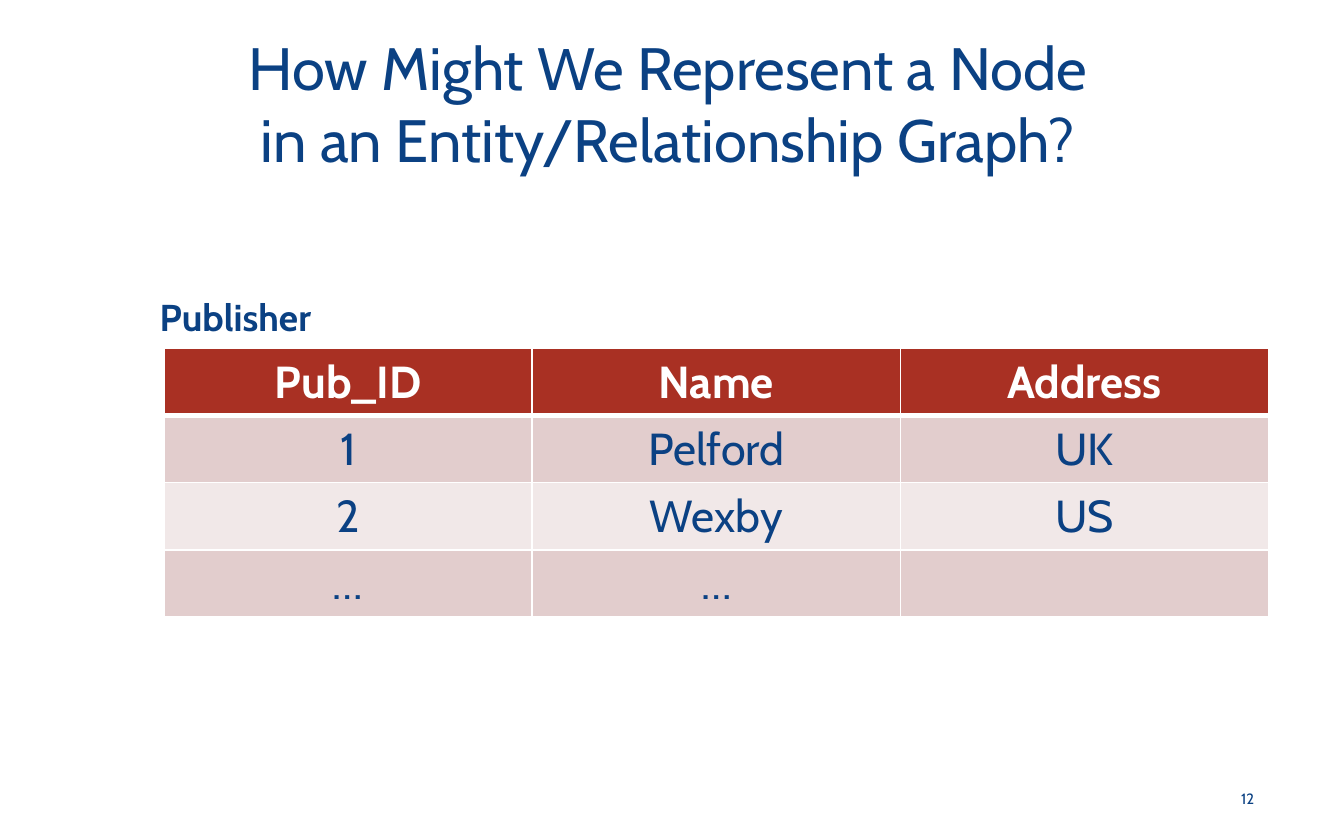
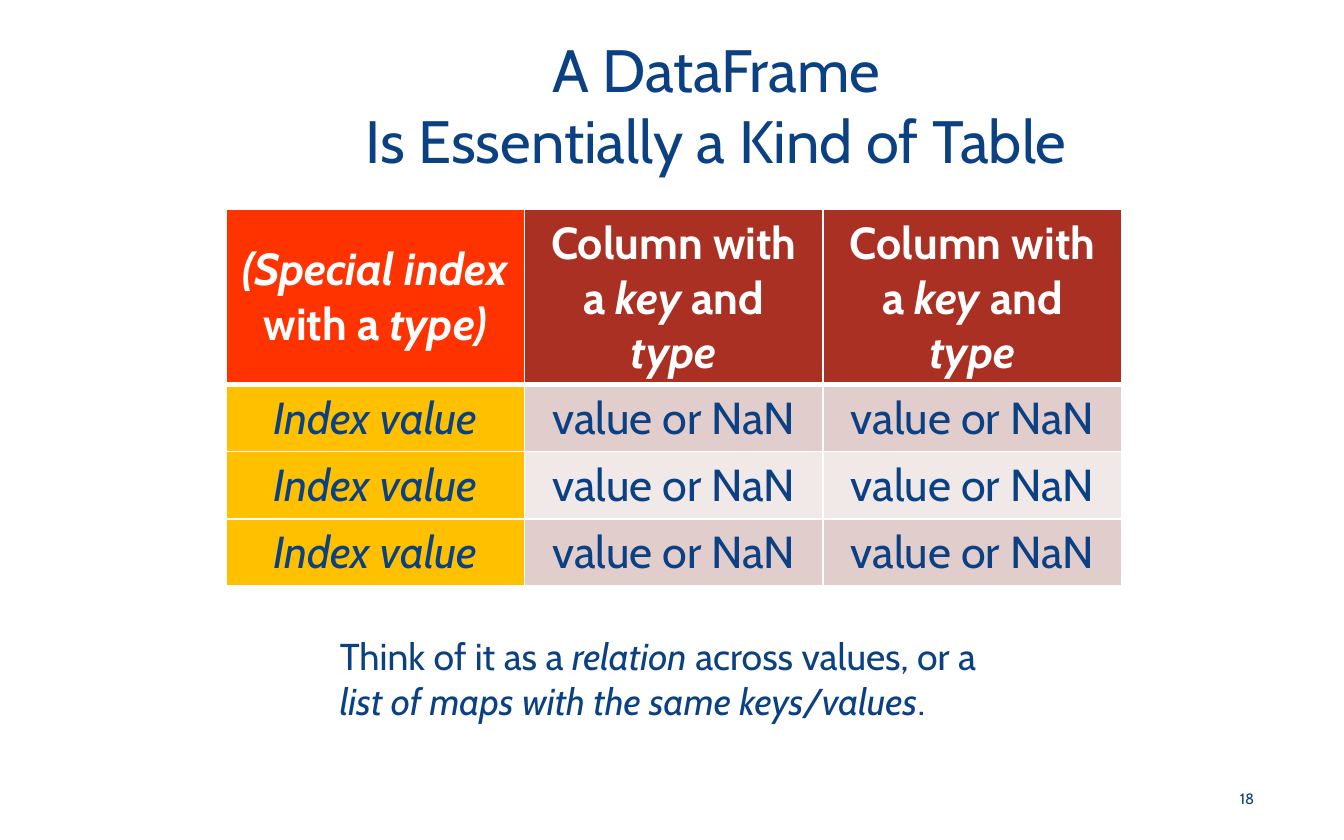
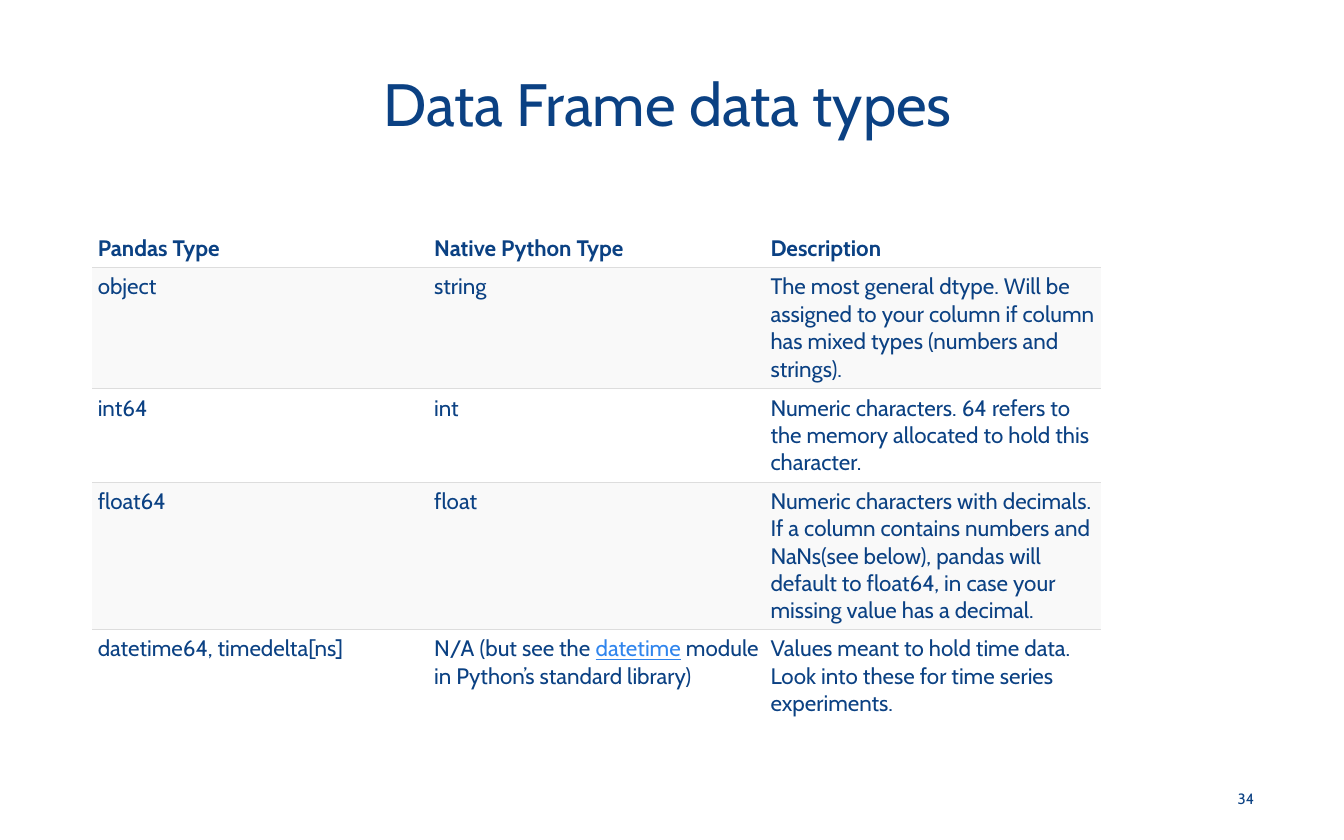
"""Build three slides on tables, entity nodes and data frame types."""
import pptx
import pptx.dml.color
import pptx.enum.text
import pptx.util
from lxml import etree

Pt = pptx.util.Pt
ALIGN = pptx.enum.text.PP_ALIGN
ANCHOR = pptx.enum.text.MSO_ANCHOR

FONT = "Cabin"
COLORS = {
    "navy": "0B4183", "white": "FFFFFF", "brick": "A93023",
    "rose": "E2CDCD", "blush": "F1E8E8", "scarlet": "FF3300",
    "amber": "FFC000", "mist": "F9F9F9", "rule": "DDDDDD", "link": "3085ED",
}
WIDE_TITLE = (36.72, 12.24, 642.24, 85.68)
NARROW_TITLE = (87.84, 12.96, 591.84, 85.68)
PAGE_NUMBER = (646.56, 416.16, 32.4, 23.76)


def rgb(color):
    return pptx.dml.color.RGBColor.from_string(COLORS[color])


class Deck:
    def __init__(self):
        self.presentation = pptx.Presentation()
        self.presentation.slide_width = Pt(720)
        self.presentation.slide_height = Pt(450)
        self.slide = None

    def start(self, title, number, title_place=WIDE_TITLE):
        self.slide = self.presentation.slides.add_slide(
            self.presentation.slide_layouts[6])
        self.text(title_place, title, 32, align=ALIGN.CENTER, anchor=ANCHOR.MIDDLE)
        self.text(PAGE_NUMBER, number, 8, align=ALIGN.RIGHT,
                  anchor=ANCHOR.MIDDLE, before=1.6)

    def runs(self, paragraph, content, size, color="navy", bold=False):
        parts = [(content, "")] if isinstance(content, str) else content
        for words, style in parts:
            for index, line in enumerate(words.split("\n")):
                if index:
                    paragraph.add_line_break()
                if not line:
                    continue
                run = paragraph.add_run()
                run.text = line
                font = run.font
                font.name, font.size = FONT, Pt(size)
                font.bold = bold
                font.italic = style == "italic"
                font.underline = style == "link"
                font.color.rgb = rgb("link" if style == "link" else color)

    def text(self, place, content, size, bold=False, align=ALIGN.LEFT,
             anchor=ANCHOR.TOP, before=0):
        frame = self.slide.shapes.add_textbox(*map(Pt, place)).text_frame
        frame.word_wrap = True
        frame.vertical_anchor = anchor
        paragraph = frame.paragraphs[0]
        paragraph.alignment = align
        paragraph.space_before = Pt(before)
        self.runs(paragraph, content, size, bold=bold)

    def border(self, cell, side, color, width):
        properties = cell._tc.get_or_add_tcPr()
        tag = pptx.oxml.ns.qn
        line = etree.SubElement(properties, tag(f"a:ln{side}"), w=str(Pt(width)))
        if width:
            fill = etree.SubElement(line, tag("a:solidFill"))
            etree.SubElement(fill, tag("a:srgbClr"), val=COLORS[color])
        else:
            etree.SubElement(line, tag("a:noFill"))

    def table(self, left, top, column_width, heights, rows, look):
        columns = len(rows[0])
        table = self.slide.shapes.add_table(
            len(rows), columns, Pt(left), Pt(top),
            Pt(column_width * columns), Pt(sum(heights))).table
        table.first_row = table.horz_banding = False
        for column in table.columns:
            column.width = Pt(column_width)
        for r, (height, contents) in enumerate(zip(heights, rows)):
            table.rows[r].height = Pt(height)
            for c, content in enumerate(contents):
                look(self, table.cell(r, c), r, c, len(rows), content)

    def cell(self, cell, content, fill, color, size, bold, align, anchor, borders):
        for side, (line_color, width) in zip("LRTB", borders):
            self.border(cell, side, line_color, width)
        cell.fill.solid()
        cell.fill.fore_color.rgb = rgb(fill)
        cell.vertical_anchor = anchor
        paragraph = cell.text_frame.paragraphs[0]
        paragraph.alignment = align
        self.runs(paragraph, content, size, color, bold)

    def banded(self, cell, r, c, count, content, index_column=False):
        header, index = r == 0, index_column and c == 0
        if header:
            fill = "scarlet" if index else "brick"
        else:
            fill = "amber" if index else ("blush", "rose")[r % 2]
        widths = (1, 1, 3 if r == 1 else 1, 3 if header else 1)
        self.cell(cell, content, fill, "white" if header else "navy", 24, header,
                  ALIGN.CENTER, ANCHOR.MIDDLE if header and index else ANCHOR.TOP,
                  [("white", width) for width in widths])

    def indexed(self, cell, r, c, count, content):
        self.banded(cell, r, c, count, content, index_column=True)

    def ruled(self, cell, r, c, count, content):
        cell.margin_left = cell.margin_right = Pt(3)
        cell.margin_top = cell.margin_bottom = Pt(3)
        widths = (0, 0, 0.6 if r else 0, 0.6 if r < count - 1 else 0)
        self.cell(cell, content, ("white", "mist")[r % 2], "navy", 12, r == 0,
                  ALIGN.LEFT, ANCHOR.TOP if r else ANCHOR.BOTTOM,
                  [("rule", width) for width in widths])


def main():
    deck = Deck()

    deck.start("How Might We Represent a Node\nin an Entity/Relationship Graph?", "12")
    publishers = [
        ("Pub_ID", "Name", "Address"),
        ("1", "Pelford", "UK"),
        ("2", "Wexby", "US"),
        ("…", "…", ""),
    ]
    deck.table(87.84, 186.48, 197.28, [36] * 4, publishers, Deck.banded)
    deck.text((78.48, 154.08, 109.44, 31.68), "Publisher", 20, bold=True)

    deck.start("A DataFrame\nIs Essentially a Kind of Table", "18", NARROW_TITLE)
    index_header = [("(Special index", "italic"), (" with a ", ""), ("type)", "italic")]
    column_header = [("Column with a ", ""), ("key", "italic"),
                     (" and ", ""), ("type", "italic")]
    index_value = [("Index value", "italic")]
    frame_rows = [(index_header, column_header, column_header)]
    frame_rows += [(index_value, "value or NaN", "value or NaN")] * 3
    deck.table(120.96, 112.32, 160, [93.6, 36, 36, 36], frame_rows, Deck.indexed)
    deck.text((174.96, 335.52, 393.12, 55.44), [
        ("Think of it as a ", ""), ("relation", "italic"),
        (" across values, or a\n", ""),
        ("list of maps with the same keys/values", "italic"), (".", ""),
    ], 20, before=4)

    deck.start("Data Frame data types", "34")
    data_types = [
        ("Pandas Type", "Native Python Type", "Description"),
        ("object", "string",
         "The most general dtype. Will be assigned to your column if column "
         "has mixed types (numbers and strings)."),
        ("int64", "int",
         "Numeric characters. 64 refers to the memory allocated to hold this "
         "character."),
        ("float64", "float",
         "Numeric characters with decimals. If a column contains numbers and "
         "NaNs(see below), pandas will default to float64, in case your missing "
         "value has a decimal."),
        ("datetime64, timedelta[ns]",
         [("N/A (but see the ", ""), ("datetime", "link"),
          (" module in Python’s standard library)", "")],
         "Values meant to hold time data. Look into these for time series "
         "experiments."),
    ]
    deck.table(49.4, 122.4, 180.2, [21, 65, 50, 79, 50], data_types, Deck.ruled)

    deck.presentation.save("out.pptx")


if __name__ == "__main__":
    main()
